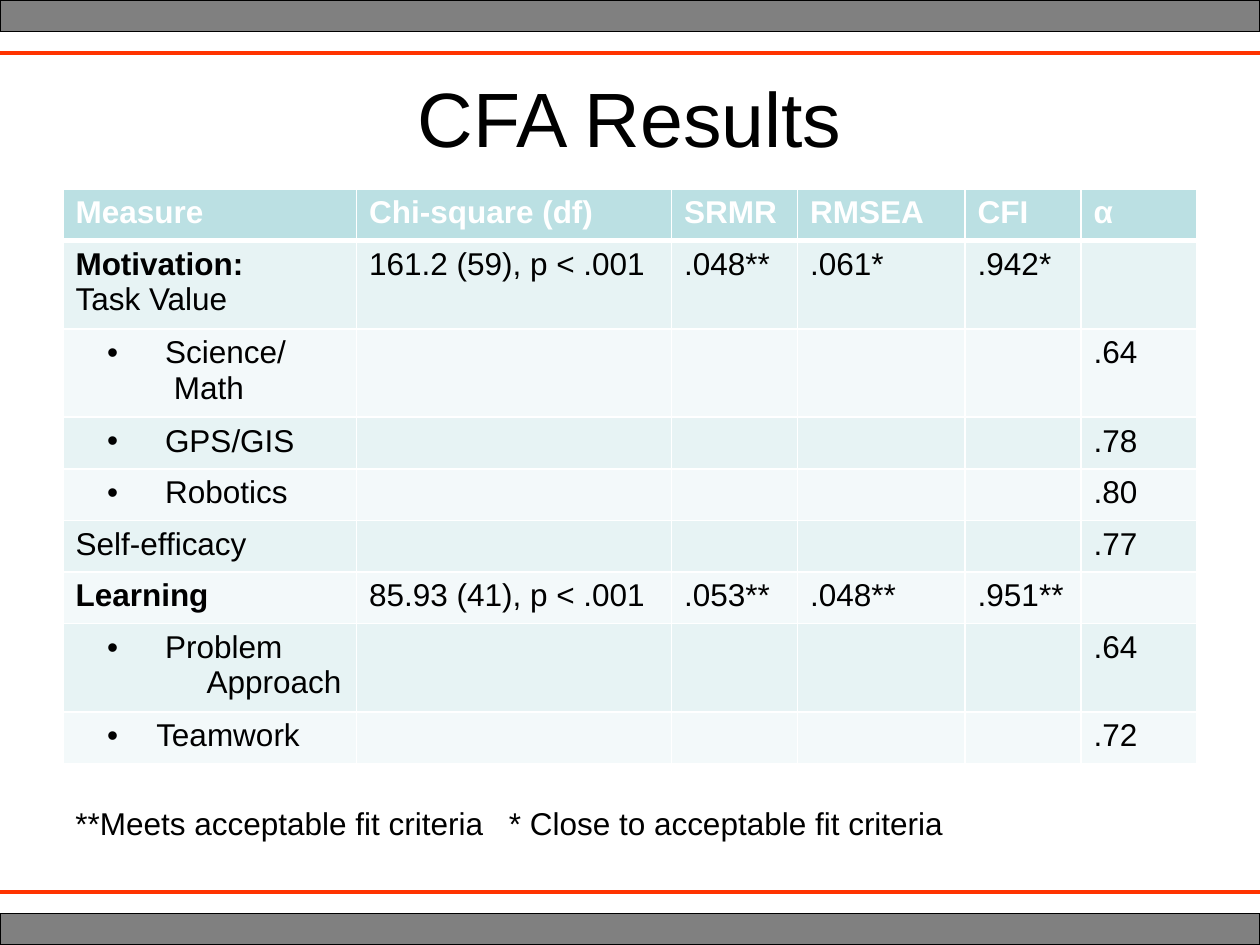
import pptx
import pptx.util
import pptx.dml.color
import pptx.enum.shapes
import pptx.enum.text
import pptx.oxml.ns
from dataclasses import dataclass
from lxml import etree

Inches, Pt = pptx.util.Inches, pptx.util.Pt
qn = pptx.oxml.ns.qn
Anchor = pptx.enum.text.MSO_ANCHOR
Align = pptx.enum.text.PP_ALIGN


@dataclass
class Theme:
    font: str = "Arial"
    ink: str = "000000"
    white: str = "FFFFFF"
    gray: str = "808080"
    red: str = "FF3300"
    head: str = "BBE0E3"
    bands: tuple = ("E7F3F4", "F3F9FA")
    title: int = 44
    body: int = 18


@dataclass
class Line:
    text: str
    bold: bool = False
    left: float = 0
    bullet: bool = False


def rgb(code):
    return pptx.dml.color.RGBColor.from_string(code)


class Deck:
    def __init__(self, theme):
        self.theme = theme
        self.prs = pptx.Presentation()
        self.prs.slide_width, self.prs.slide_height = Inches(10), Inches(7.5)
        self.slide = self.prs.slides.add_slide(self.prs.slide_layouts[6])

    def run(self, para, text, size, color, bold=False):
        run = para.add_run()
        run.text = text
        run.font.name, run.font.size = self.theme.font, Pt(size)
        run.font.bold = bold
        run.font.color.rgb = rgb(color)

    def text(self, box, text, size, align=Align.LEFT, anchor=Anchor.TOP, tab=None):
        frame = self.slide.shapes.add_textbox(*map(Inches, box)).text_frame
        frame.word_wrap, frame.vertical_anchor = True, anchor
        para = frame.paragraphs[0]
        para.alignment = align
        self.run(para, text, size, self.theme.ink)
        if tab:
            stops = etree.SubElement(para._p.get_or_add_pPr(), qn("a:tabLst"))
            etree.SubElement(stops, qn("a:tab"), pos=str(Inches(tab)), algn="l")

    def bar(self, top):
        bar = self.slide.shapes.add_shape(
            pptx.enum.shapes.MSO_SHAPE.RECTANGLE,
            0, Inches(top), Inches(10), Inches(0.25))
        bar.shadow.inherit = False
        bar.fill.solid()
        bar.fill.fore_color.rgb = rgb(self.theme.gray)
        bar.line.color.rgb = rgb(self.theme.ink)
        bar.line.width = Pt(0.75)

    def rule(self, top):
        rule = self.slide.shapes.add_connector(
            pptx.enum.shapes.MSO_CONNECTOR.STRAIGHT,
            0, Inches(top), Inches(10), Inches(top))
        rule.line.color.rgb = rgb(self.theme.red)
        rule.line.width = Pt(2.25)
        etree.SubElement(rule._element.spPr, qn("a:effectLst"))

    def indent(self, para, line):
        props = para._p.get_or_add_pPr()
        props.set("marL", str(Inches(line.left)))
        props.set("indent", str(Inches(0.25 - line.left) if line.bullet else 0))
        if line.bullet:
            etree.SubElement(props, qn("a:buFont"), typeface=self.theme.font)
            etree.SubElement(props, qn("a:buChar"), char="•")

    def border(self, cell, top, bottom):
        props = cell._tc.get_or_add_tcPr()
        sides = (("L", 1), ("R", 1), ("T", top), ("B", bottom))
        for spot, (side, width) in enumerate(sides):
            edge = etree.Element(qn(f"a:ln{side}"), w=str(Pt(width)))
            fill = etree.SubElement(edge, qn("a:solidFill"))
            etree.SubElement(fill, qn("a:srgbClr"), val=self.theme.white)
            props.insert(spot, edge)

    def cell(self, cell, lines, fill, color, top, bottom):
        cell.fill.solid()
        cell.fill.fore_color.rgb = rgb(fill)
        self.border(cell, top, bottom)
        frame = cell.text_frame
        for num, line in enumerate(lines):
            para = frame.add_paragraph() if num else frame.paragraphs[0]
            if line.left:
                self.indent(para, line)
            self.run(para, line.text, self.theme.body, color, line.bold)

    def table(self, left, top, widths, rows):
        high = [0.66 if len(row[0]) > 1 else 0.41 for row in rows]
        grid = self.slide.shapes.add_table(
            len(rows), len(widths), Inches(left), Inches(top),
            Inches(sum(widths)), Inches(sum(high))).table
        for col, width in zip(grid.columns, widths):
            col.width = Inches(width)
        for r, row in enumerate(rows):
            grid.rows[r].height = Inches(high[r])
            fill = self.theme.bands[(r - 1) % 2] if r else self.theme.head
            color = self.theme.ink if r else self.theme.white
            for c, lines in enumerate(row):
                self.cell(grid.cell(r, c), lines, fill, color,
                          3 if r == 1 else 1, 1 if r else 3)


def cells(*texts, bold=False):
    return [[Line(text, bold)] if text else [] for text in texts]


def fit(lines, *stats):
    return [lines] + cells(*stats, "")


def score(lines, alpha):
    return [lines] + cells("", "", "", "", alpha)


def item(text, left=0.71):
    return Line(text, left=left, bullet=True)


ROWS = [
    cells("Measure", "Chi-square (df)", "SRMR", "RMSEA", "CFI", "α", bold=True),
    fit([Line("Motivation:", True), Line("Task Value")],
        "161.2 (59), p < .001", ".048**", ".061*", ".942*"),
    score([item("Science/"), Line("Math", left=0.78)], ".64"),
    score([item("GPS/GIS")], ".78"),
    score([item("Robotics")], ".80"),
    score([Line("Self-efficacy")], ".77"),
    fit([Line("Learning", True)],
        "85.93 (41), p < .001", ".053**", ".048**", ".951**"),
    score([item("Problem"), Line("Approach", left=1.04)], ".64"),
    score([item("Teamwork", 0.64)], ".72"),
]


def main():
    theme = Theme()
    deck = Deck(theme)

    # Title
    deck.text((0.5, 0.3, 9, 1.25), "CFA Results", theme.title,
              Align.CENTER, Anchor.MIDDLE)

    # Fit statistics
    deck.table(0.5, 1.5, (2.33, 2.5, 1, 1.33, 0.92, 0.92), ROWS)

    # Key to the asterisks
    deck.text((0.5, 6.33, 8.08, 0.4),
              "**Meets acceptable fit criteria\t* Close to acceptable fit criteria",
              theme.body, tab=3.44)

    # Bars and rules at the slide's edges
    for top in (0, 7.25):
        deck.bar(top)
    for top in (0.42, 7.08):
        deck.rule(top)

    deck.prs.save("out.pptx")


if __name__ == "__main__":
    main()
